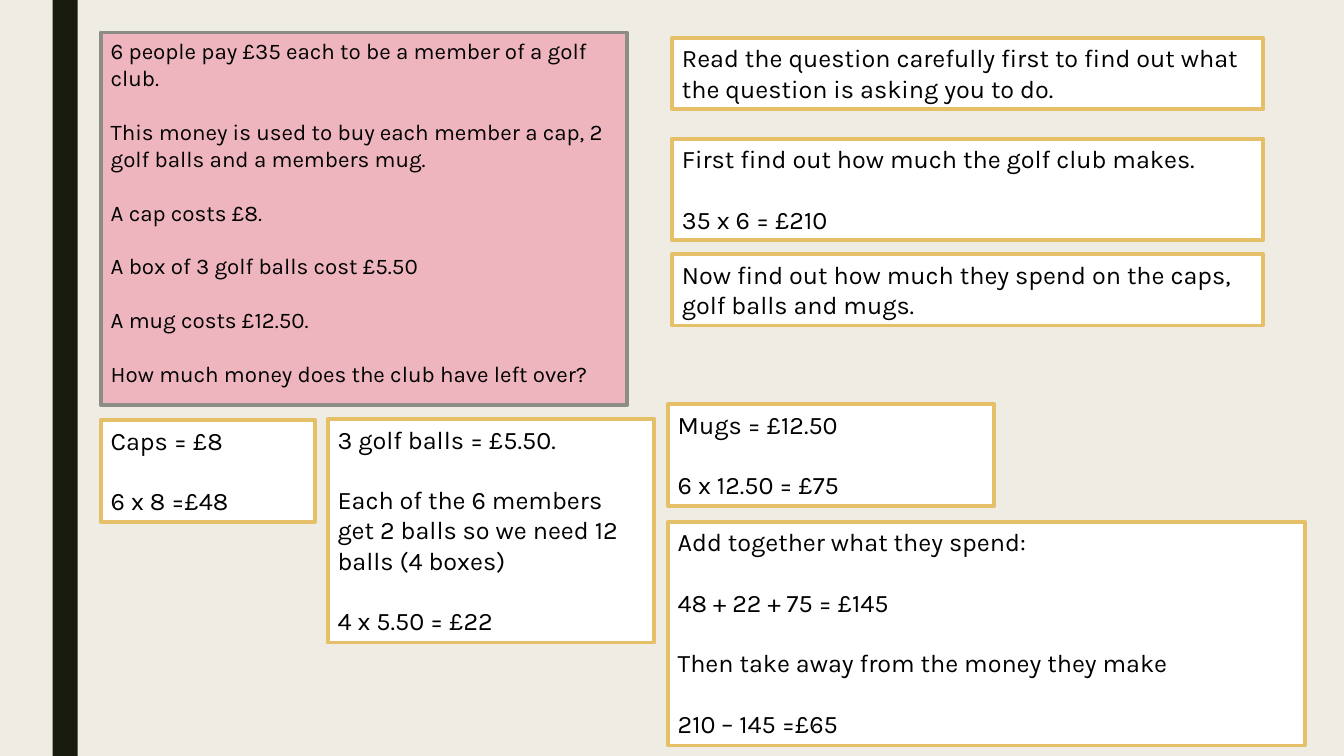
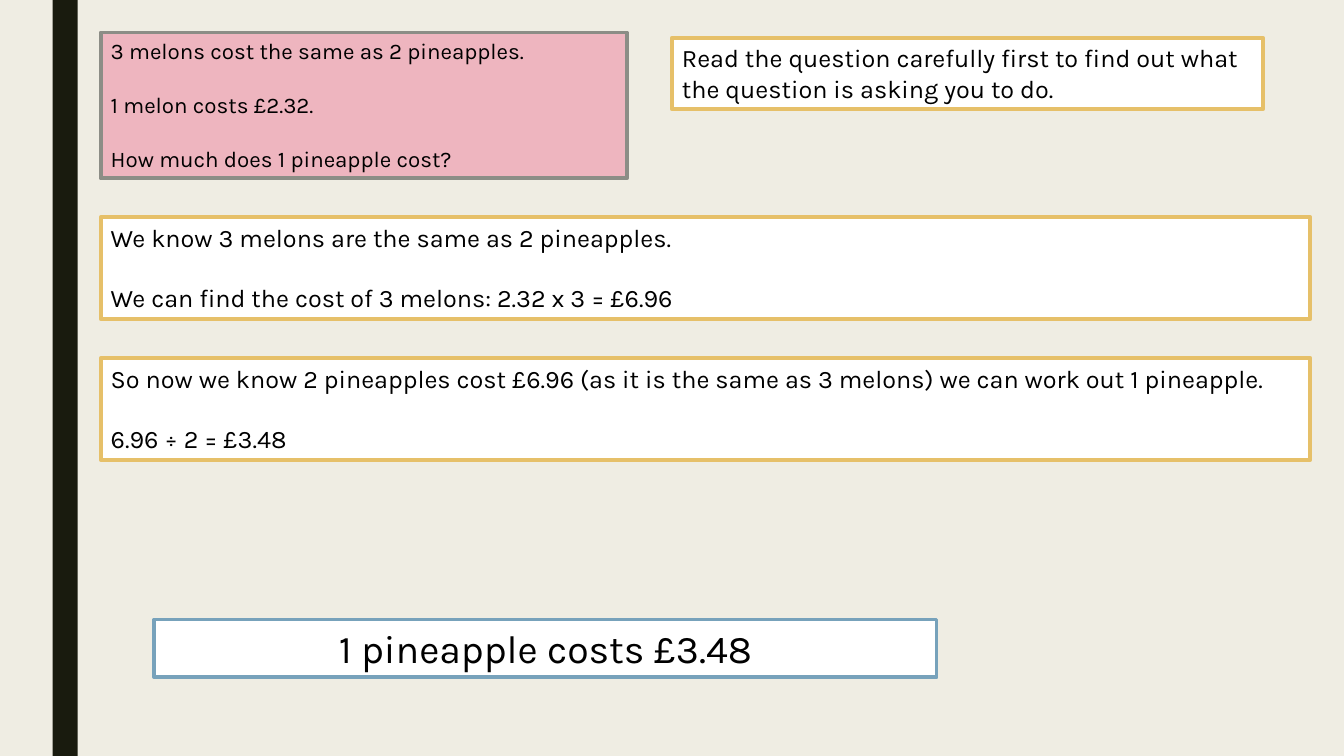
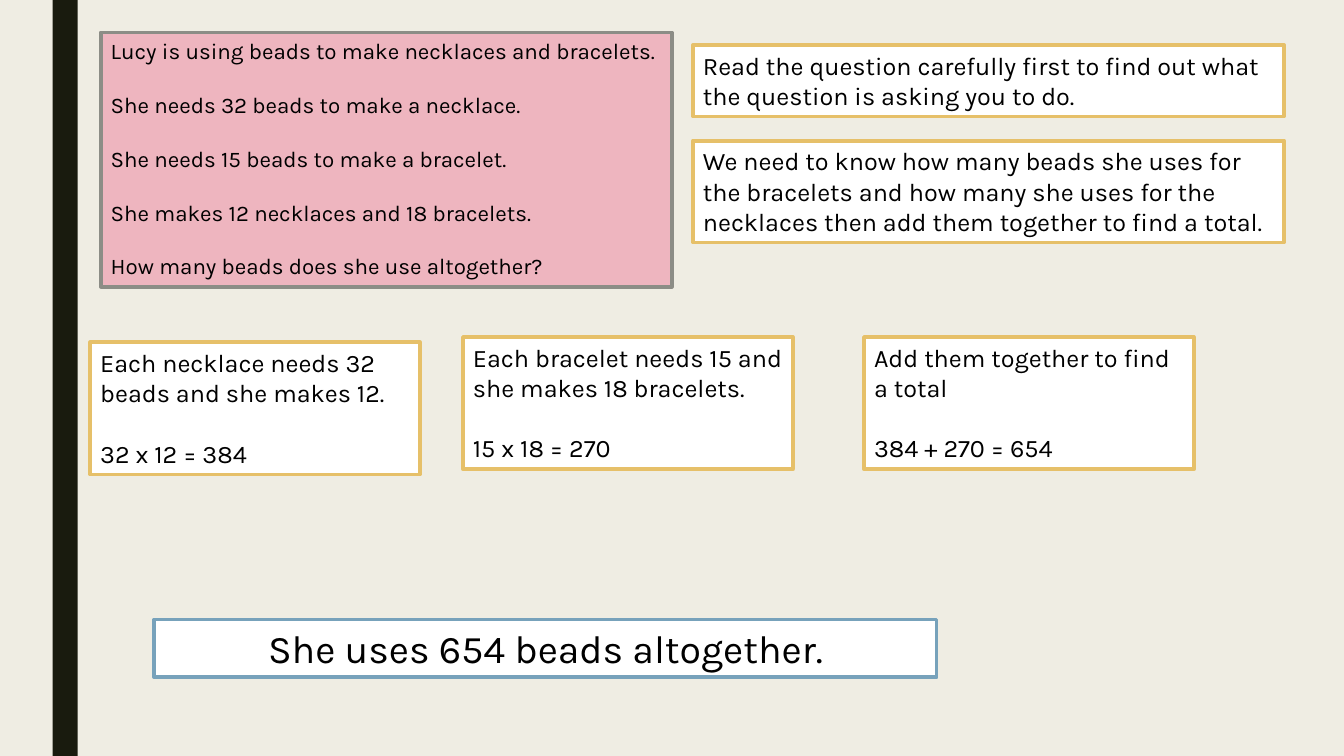
from pptx import Presentation
from pptx.dml.color import RGBColor
from pptx.enum.shapes import MSO_SHAPE as Shape
from pptx.enum.text import MSO_ANCHOR as Anchor, MSO_AUTO_SIZE as AutoSize, PP_ALIGN as Align
from pptx.util import Pt

# Shared look: lengths in px, 96 to the inch
PX = 9525
WIDTH, HEIGHT = 1280, 720
FONT = "Karla"
BACKGROUND, BAR, INK = "EFEDE3", "191B0E", "000000"
LINE_WEIGHT = 2.75
LINE_PITCH = 1.2  # height of one text line, relative to its size

STYLES = {
    "question": dict(fill="EEB5BF", line="8C8D86", size=16),
    "step": dict(fill="FFFFFF", line="E6C069", size=18),
    "answer": dict(fill="FFFFFF", line="77A2BB", size=28, align=Align.CENTER),
}

# Box heights by the number of text lines in a step
STEP_HEIGHT = {2: 68, 3: 97, 4: 126, 7: 213}
LEFT, TOP = 96, 31
QUESTION_WIDTH, HINT_WIDTH, CARD_WIDTH = 501, 563, 314
HINT_X, WIDE_HINT_X, WORKING_X = 640, 660, 636
ANSWER_BOX = (147, 590, 745, 55)
READ_FIRST = ["Read the question carefully first to find out what the question is asking you to do."]

# Content: (style, (left, top, width, height), paragraphs)
SLIDES = [
    [
        ("question", (LEFT, TOP, QUESTION_WIDTH, 355), [
            "6 people pay £35 each to be a member of a golf club.",
            "This money is used to buy each member a cap, 2 golf balls and a members mug.",
            "A cap costs £8.",
            "A box of 3 golf balls cost £5.50",
            "A mug costs £12.50.",
            "How much money does the club have left over?",
        ]),
        ("step", (HINT_X, 36, HINT_WIDTH, STEP_HEIGHT[2]), READ_FIRST),
        ("step", (HINT_X, 132, HINT_WIDTH, STEP_HEIGHT[3]),
         ["First find out how much the golf club makes.", "35 x 6 = £210"]),
        ("step", (HINT_X, 242, HINT_WIDTH, STEP_HEIGHT[2]),
         ["Now find out how much they spend on the caps, golf balls and mugs."]),
        ("step", (LEFT, 400, 204, STEP_HEIGHT[3]), ["Caps = £8", "6 x 8 =£48"]),
        ("step", (312, 399, 311, STEP_HEIGHT[7]), [
            "3 golf balls = £5.50.",
            "Each of the 6 members get 2 balls so we need 12 balls (4 boxes)",
            "4 x 5.50 = £22",
        ]),
        ("step", (WORKING_X, 385, 311, STEP_HEIGHT[3]), ["Mugs = £12.50", "6 x 12.50 = £75"]),
        ("step", (WORKING_X, 497, 607, STEP_HEIGHT[7]), [
            "Add together what they spend:",
            "48 + 22 + 75 = £145",
            "Then take away from the money they make",
            "210 – 145 =£65",
        ]),
    ],
    [
        ("question", (LEFT, TOP, QUESTION_WIDTH, 139), [
            "3 melons cost the same as 2 pineapples.",
            "1 melon costs £2.32.",
            "How much does 1 pineapple cost?",
        ]),
        ("step", (HINT_X, 36, HINT_WIDTH, STEP_HEIGHT[2]), READ_FIRST),
        ("step", (LEFT, 207, 1152, STEP_HEIGHT[3]), [
            "We know 3 melons are the same as 2 pineapples.",
            "We can find the cost of 3 melons: 2.32 x 3 = £6.96",
        ]),
        ("step", (LEFT, 341, 1152, STEP_HEIGHT[3]), [
            "So now we know 2 pineapples cost £6.96 (as it is the same as 3 melons) "
            "we can work out 1 pineapple.",
            "6.96 ÷ 2 = £3.48",
        ]),
        ("answer", ANSWER_BOX, ["1 pineapple costs £3.48"]),
    ],
    [
        ("question", (LEFT, TOP, 544, 242), [
            "Lucy is using beads to make necklaces and bracelets.",
            "She needs 32 beads to make a necklace.",
            "She needs 15 beads to make a bracelet.",
            "She makes 12 necklaces and 18 bracelets.",
            "How many beads does she use altogether?",
        ]),
        ("step", (WIDE_HINT_X, 43, HINT_WIDTH, STEP_HEIGHT[2]), READ_FIRST),
        ("step", (WIDE_HINT_X, 134, HINT_WIDTH, STEP_HEIGHT[3]), [
            "We need to know how many beads she uses for the bracelets and how many "
            "she uses for the necklaces then add them together to find a total.",
        ]),
        ("step", (86, 326, CARD_WIDTH, STEP_HEIGHT[4]),
         ["Each necklace needs 32 beads and she makes 12.", "32 x 12 = 384"]),
        ("step", (441, 321, CARD_WIDTH, STEP_HEIGHT[4]),
         ["Each bracelet needs 15 and she makes 18 bracelets.", "15 x 18 = 270"]),
        ("step", (823, 321, CARD_WIDTH, STEP_HEIGHT[4]),
         ["Add them together to find a total", "384 + 270 = 654"]),
        ("answer", ANSWER_BOX, ["She uses 654 beads altogether."]),
    ],
]


def paint(fill, color):
    fill.solid()
    fill.fore_color.rgb = RGBColor.from_string(color)


def scaled(*lengths):
    return [length * PX for length in lengths]


def write(frame, paragraphs, size, align=Align.LEFT):
    """Fill a text frame, leaving one line's height between paragraphs."""
    frame.word_wrap = True
    frame.vertical_anchor = Anchor.TOP
    frame.auto_size = AutoSize.SHAPE_TO_FIT_TEXT
    for index, text in enumerate(paragraphs):
        para = frame.add_paragraph() if index else frame.paragraphs[0]
        para.alignment = align
        if index:
            para.space_before = Pt(size * LINE_PITCH)
        span = para.add_run()
        span.text = text
        span.font.name = FONT
        span.font.size = Pt(size)
        span.font.color.rgb = RGBColor.from_string(INK)


def add_box(page, place, paragraphs, fill, line, **text_format):
    box = page.shapes.add_textbox(*scaled(*place))
    paint(box.fill, fill)
    paint(box.line.fill, line)
    box.line.width = Pt(LINE_WEIGHT)
    write(box.text_frame, paragraphs, **text_format)


def add_page(deck):
    page = deck.slides.add_slide(deck.slide_layouts[6])
    bar = page.shapes.add_shape(Shape.RECTANGLE, *scaled(50, 0, 24, HEIGHT))
    bar.shadow.inherit = False
    paint(bar.fill, BAR)
    bar.line.fill.background()
    return page


def main():
    deck = Presentation()
    deck.slide_width, deck.slide_height = scaled(WIDTH, HEIGHT)
    paint(deck.slide_master.background.fill, BACKGROUND)
    for boxes in SLIDES:
        page = add_page(deck)
        for style, place, paragraphs in boxes:
            add_box(page, place, paragraphs, **STYLES[style])
    deck.save("out.pptx")


if __name__ == "__main__":
    main()
